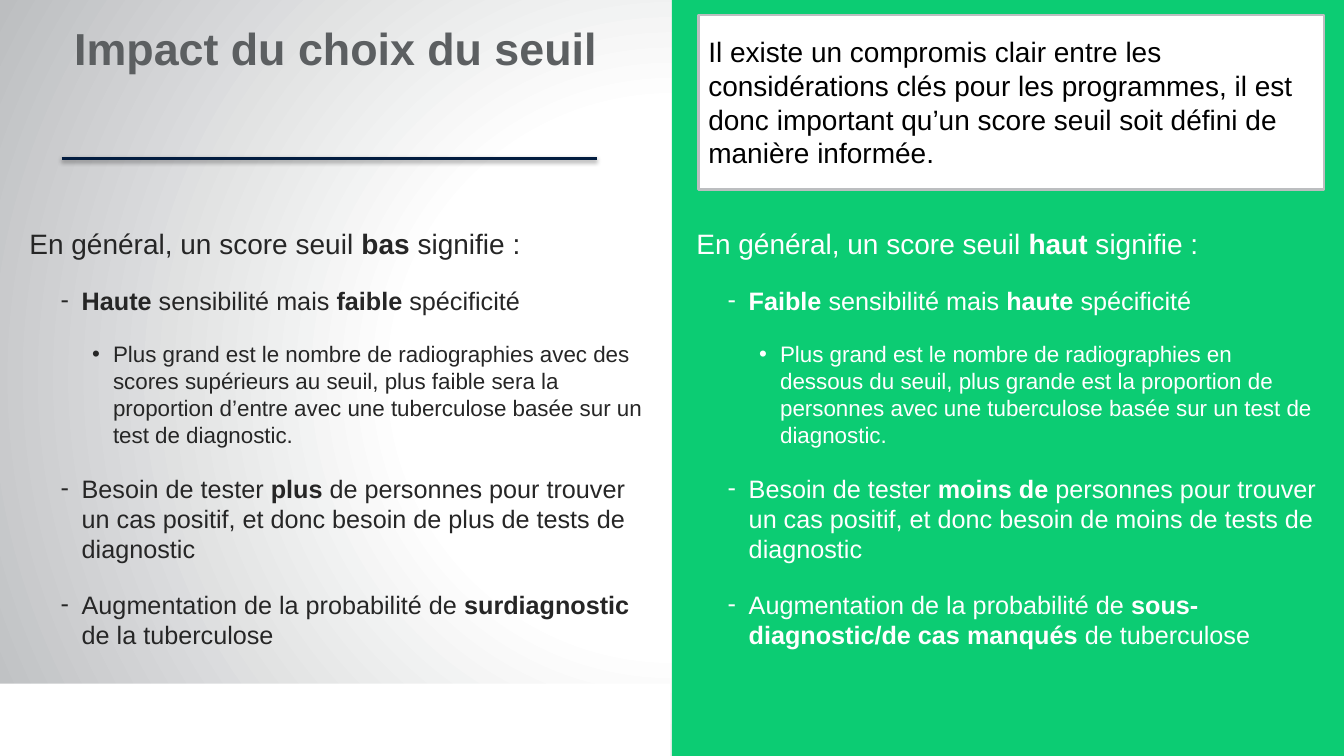
from lxml import etree
from pptx import Presentation
from pptx import util as u
from pptx.dml.color import RGBColor
from pptx.enum import shapes, text
from pptx.oxml import parse_xml
from pptx.oxml.ns import nsdecls, qn

GREEN, WHITE, BLACK = "0CCC73", "FFFFFF", "000000"
GREY, TITLE_GREY, DARK, NAVY = "BCBEC0", "5C5F61", "262626", "031D40"
LEVELS = [(0.1, 0, 20, None), (1.42, -0.53, 18, "-"), (2.21, -0.53, 16, "•")]

LOW_THRESHOLD = [
    (0, "En général, un score seuil **bas** signifie\u00a0:"),
    (1, "**Haute** sensibilité mais **faible** spécificité"),
    (2, "Plus grand est le nombre de radiographies avec des scores supérieurs au seuil, "
        "plus faible sera la proportion d’entre avec une tuberculose basée sur un test de diagnostic."),
    (1, "Besoin de tester **plus** de personnes pour trouver un cas positif, "
        "et donc besoin de plus de tests de diagnostic"),
    (1, "Augmentation de la probabilité de **surdiagnostic** de la tuberculose"),
]
HIGH_THRESHOLD = [
    (0, "En général, un score seuil **haut** signifie\u00a0:"),
    (1, "**Faible** sensibilité mais **haute** spécificité"),
    (2, "Plus grand est le nombre de radiographies en dessous du seuil, plus grande est la "
        "proportion de personnes avec une tuberculose basée sur un test de diagnostic."),
    (1, "Besoin de tester **moins de** personnes pour trouver un cas positif, "
        "et donc besoin de moins de tests de diagnostic"),
    (1, "Augmentation de la probabilité de **sous-diagnostic/de cas manqués **de tuberculose"),
]
COMPROMISE = ("Il existe un compromis clair entre les considérations clés pour les programmes, "
              "il est donc important qu’un score seuil soit défini de manière informée.")


def colour(value):
    return RGBColor.from_string(value)


def set_background(page):
    page.background.fill.gradient()
    gradient = page.background._cSld.find(".//" + qn("a:gradFill"))
    stops = "".join(f'<a:gs pos="{place}"><a:srgbClr val="{value}"/></a:gs>'
                    for place, value in ((0, WHITE), (35000, WHITE), (100000, GREY)))
    gradient.getparent().replace(gradient, parse_xml(
        f'<a:gradFill {nsdecls("a")} rotWithShape="1"><a:gsLst>{stops}</a:gsLst>'
        '<a:path path="circle"><a:fillToRect l="50000" t="50000" r="50000" b="50000"/>'
        '</a:path></a:gradFill>'))


def add_panel(page, left, top, width, height, fill, line=None):
    panel = page.shapes.add_shape(shapes.MSO_SHAPE.RECTANGLE, u.Cm(left), u.Cm(top),
                                  u.Cm(width), u.Cm(height))
    panel.shadow.inherit = False
    panel.fill.solid()
    panel.fill.fore_color.rgb = colour(fill)
    if line:
        panel.line.color.rgb = colour(line)
        panel.line.width = u.Pt(2)
    else:
        panel.line.fill.background()
    return panel


def add_text_box(page, left, top, width, height):
    box = page.shapes.add_textbox(u.Cm(left), u.Cm(top), u.Cm(width), u.Cm(height))
    frame = box.text_frame
    frame.word_wrap = True
    frame.margin_left = frame.margin_right = 0
    return frame


def write(para, content, size, ink, bold=False):
    for index, piece in enumerate(content.split("**")):
        if piece:
            span = para.add_run()
            span.text = piece
            span.font.name = "Arial"
            span.font.size = u.Pt(size)
            span.font.bold = bold or index % 2 == 1
            span.font.color.rgb = colour(ink)


def indent(para, margin, hanging, bullet, ink):
    properties = para._p.get_or_add_pPr()
    properties.set("marL", str(u.Cm(margin)))
    properties.set("indent", str(u.Cm(hanging)))
    if bullet:
        tint = etree.SubElement(properties, qn("a:buClr"))
        etree.SubElement(tint, qn("a:srgbClr"), val=ink)
        etree.SubElement(properties, qn("a:buFont"), typeface="Arial")
        etree.SubElement(properties, qn("a:buChar"), char=bullet)


def add_outline(page, left, top, width, height, items, ink):
    frame = add_text_box(page, left, top, width, height)
    for index, (level, content) in enumerate(items):
        para = frame.paragraphs[0] if index == 0 else frame.add_paragraph()
        margin, hanging, size, bullet = LEVELS[level]
        indent(para, margin, hanging, bullet, ink)
        para.level = level
        if index == 0:
            para.line_spacing = 1.1
        else:
            para.space_before = u.Pt(18)
        write(para, content, size, ink)


def add_title(page, content):
    para = add_text_box(page, 0, 0.56, 16.93, 2.9).paragraphs[0]
    para.alignment = text.PP_ALIGN.CENTER
    para.line_spacing = 0.9
    write(para, content, 32, TITLE_GREY, bold=True)


def add_callout(page, content):
    panel = add_panel(page, 17.6, 0.38, 15.77, 4.39, WHITE, GREY)
    frame = panel.text_frame
    frame.word_wrap = True
    frame.vertical_anchor = text.MSO_ANCHOR.MIDDLE
    para = frame.paragraphs[0]
    para.alignment = text.PP_ALIGN.LEFT
    write(para, content, 20, BLACK)


def add_rule(page, left, right, height):
    rule = page.shapes.add_connector(shapes.MSO_CONNECTOR.STRAIGHT, u.Cm(left), u.Cm(height),
                                     u.Cm(right), u.Cm(height))
    rule.line.color.rgb = colour(NAVY)
    rule.line.width = u.Pt(2)
    rule._element.spPr.append(parse_xml(
        f'<a:effectLst {nsdecls("a")}><a:outerShdw blurRad="{u.Pt(3.1)}" dist="{u.Pt(1.6)}" '
        f'dir="5400000" rotWithShape="0"><a:srgbClr val="{BLACK}"><a:alpha val="37000"/>'
        '</a:srgbClr></a:outerShdw></a:effectLst>'))


def main():
    deck = Presentation()
    deck.slide_width, deck.slide_height = u.Cm(33.87), u.Cm(19.05)
    page = deck.slides.add_slide(deck.slide_layouts[6])
    set_background(page)
    add_panel(page, 16.93, 0, 16.94, 19.05, GREEN)
    add_panel(page, 0, 17.23, 16.89, 1.82, WHITE)
    add_title(page, "Impact du choix du seuil")
    add_outline(page, 0.64, 5.49, 15.77, 11.58, LOW_THRESHOLD, DARK)
    add_outline(page, 17.45, 5.49, 15.77, 11.35, HIGH_THRESHOLD, WHITE)
    add_callout(page, COMPROMISE)
    add_rule(page, 1.55, 15.04, 3.99)
    deck.save("out.pptx")


if __name__ == "__main__":
    main()
